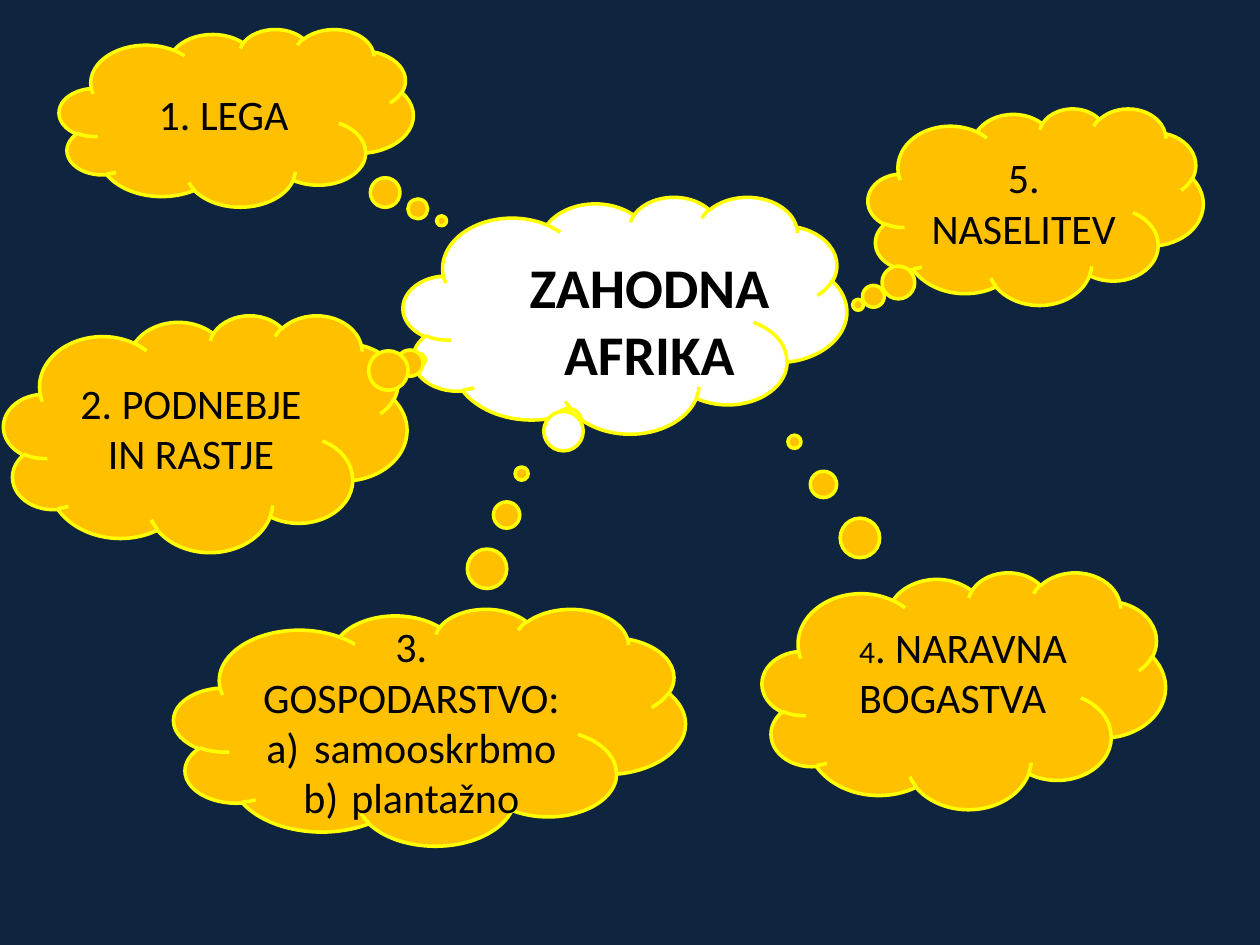
from dataclasses import dataclass

from pptx import Presentation
from pptx.dml.color import RGBColor
from pptx.enum.shapes import MSO_SHAPE
from pptx.enum.text import MSO_ANCHOR, MSO_AUTO_SIZE, PP_ALIGN
from pptx.oxml.ns import qn
from pptx.util import Inches, Pt


@dataclass(frozen=True)
class Theme:
    background: RGBColor = RGBColor(0x0F, 0x24, 0x3E)
    center: RGBColor = RGBColor(0xFF, 0xFF, 0xFF)
    topic: RGBColor = RGBColor(0xFF, 0xC0, 0x00)
    outline: RGBColor = RGBColor(0xFF, 0xFF, 0x00)
    text: RGBColor = RGBColor(0, 0, 0)
    font: str = "Calibri"
    title_size: int = 32
    topic_size: int = 24
    small_size: int = 18
    line_width: int = 2


@dataclass(frozen=True)
class Cloud:
    box: tuple[float, float, float, float]
    tail: tuple[float, float]
    fill: RGBColor
    text: str = ""
    items: tuple[str, ...] = ()


THEME = Theme()
CLOUDS = (
    Cloud((3.2, 1.56, 3.52, 1.88), (-0.13, 0.46), THEME.center),
    Cloud((0.47, 0.23, 2.81, 1.41), (0.58, 0.58), THEME.topic, "1. LEGA"),
    Cloud((0.03, 2.5, 3.2, 1.88), (0.53, -0.31), THEME.topic, "2. PODNEBJE IN RASTJE"),
    Cloud((6.89, 0.86, 2.66, 1.56), (-0.53, 0.5), THEME.topic, "5. NASELITEV"),
    Cloud((6.05, 4.54, 3.2, 1.88), (-0.42, -1.05), THEME.topic),
    Cloud((1.38, 4.83, 4.06, 1.88), (0.18, -1.07), THEME.topic,
          "3. GOSPODARSTVO:", ("samooskrbmo", "plantažno")),
)


def add_run(p, text: str, size: int, bold: bool = False) -> None:
    r = p.add_run()
    r.text = text
    formats = {"name": THEME.font, "size": Pt(size), "bold": bold}
    for name, value in formats.items():
        setattr(r.font, name, value)
    r.font.color.rgb = THEME.text


def number_item(p) -> None:
    pPr = p._p.get_or_add_pPr()
    for name, value in {"marL": Inches(0.38), "indent": -Inches(0.38)}.items():
        pPr.set(name, str(value))
    numbering = pPr.makeelement(qn("a:buAutoNum"), {"type": "alphaLcParenR"})
    pPr.append(numbering)


def add_cloud(s, cloud: Cloud) -> None:
    sp = s.shapes.add_shape(MSO_SHAPE.CLOUD_CALLOUT, *map(Inches, cloud.box))
    sp.adjustments[0], sp.adjustments[1] = cloud.tail
    sp.shadow.inherit = False
    sp.fill.solid()
    sp.fill.fore_color.rgb = cloud.fill
    sp.line.color.rgb = THEME.outline
    sp.line.width = Pt(THEME.line_width)
    if not cloud.text:
        return
    tf = sp.text_frame
    tf.word_wrap = True
    tf.vertical_anchor = MSO_ANCHOR.MIDDLE
    for i, text in enumerate((cloud.text, *cloud.items)):
        p = tf.add_paragraph() if i else tf.paragraphs[0]
        p.alignment = PP_ALIGN.CENTER
        if i:
            number_item(p)
        add_run(p, text, THEME.topic_size)


def format_frame(tf) -> None:
    formats = {
        "word_wrap": True,
        "auto_size": MSO_AUTO_SIZE.SHAPE_TO_FIT_TEXT,
        "vertical_anchor": MSO_ANCHOR.TOP,
    }
    for name, value in formats.items():
        setattr(tf, name, value)


def add_resources_label(s) -> None:
    box = map(Inches, (6.72, 4.88, 2.11, 0.91))
    tf = s.shapes.add_textbox(*box).text_frame
    format_frame(tf)
    p = tf.paragraphs[0]
    add_run(p, "4", THEME.small_size)
    add_run(p, ". NARAVNA BOGASTVA", THEME.topic_size)


def place_title(s) -> None:
    title = s.shapes.title
    place = {"left": 3.75, "top": 1.95, "width": 2.81, "height": 1.18}
    for name, value in place.items():
        setattr(title, name, Inches(value))
    format_frame(title.text_frame)
    p = title.text_frame.paragraphs[0]
    p.alignment = PP_ALIGN.CENTER
    add_run(p, "ZAHODNA AFRIKA", THEME.title_size, bold=True)
    s.shapes._spTree.append(title._element)


def main() -> None:
    prs = Presentation()
    prs.slide_width, prs.slide_height = Inches(10), Inches(7.5)
    s = prs.slides.add_slide(prs.slide_layouts[5])
    s.background.fill.solid()
    s.background.fill.fore_color.rgb = THEME.background
    for cloud in CLOUDS:
        add_cloud(s, cloud)
    add_resources_label(s)
    place_title(s)
    prs.save("out.pptx")


if __name__ == "__main__":
    main()
